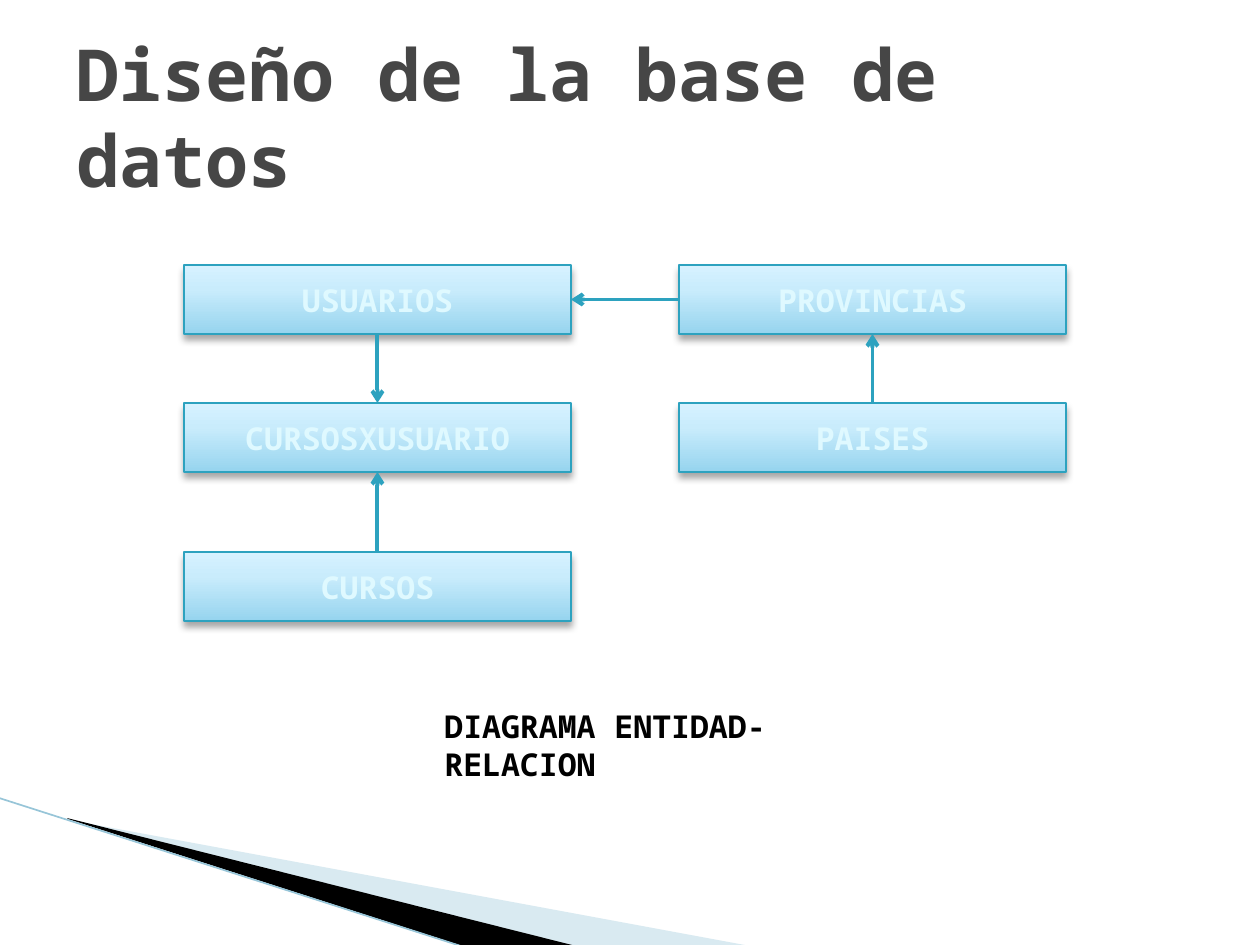
"""Builds the database design slide with its entity-relation diagram."""
from lxml import etree
from pptx import Presentation
from pptx import util as u
from pptx.dml.color import RGBColor
from pptx.enum import shapes, text
from pptx.oxml import parse_xml
from pptx.oxml.ns import nsdecls, qn

PX = 914400 / 126
FONT = "Noto Sans Mono"
GREY = RGBColor(0x46, 0x46, 0x46)
BLACK = RGBColor(0, 0, 0)
TEAL = RGBColor(0x2D, 0xA2, 0xBF)
PALE = RGBColor(0xDF, 0xF9, 0xFF)
MIST = RGBColor(0xA0, 0xCB, 0xDC)
EDGE = RGBColor(0x97, 0xC5, 0xD8)
STOPS = [(0, RGBColor(0x96, 0xD4, 0xEE)), (65, RGBColor(0xC9, 0xEC, 0xFC)),
         (100, RGBColor(0xD7, 0xF2, 0xFF))]

TITLE = ("Diseño de la base de datos", (64, 37, 1134, 158))
LABEL = ("DIAGRAMA ENTIDAD-RELACION", (432, 701, 476, 50))
COLS, ROWS, SIZE = (184, 679), (265, 403, 552), (387, 69)
TABLES = {"USUARIOS": (0, 0), "CURSOSXUSUARIO": (0, 1), "CURSOS": (0, 2),
          "PROVINCIAS": (1, 0), "PAISES": (1, 1)}
LINKS = [("PROVINCIAS", 1, "USUARIOS", 3), ("USUARIOS", 2, "CURSOSXUSUARIO", 0),
         ("CURSOS", 0, "CURSOSXUSUARIO", 2), ("PAISES", 0, "PROVINCIAS", 2)]
WEDGES = [(MIST, 40, [(69, 820), (750, 946), (575, 946), (69, 819)]),
          (BLACK, 100, [(67, 818), (576, 946), (469, 948), (68, 819)])]
STRIPE = (-1, 798, 467, 948)


def px(*vals):
    return [round(v * PX) for v in vals]


def write(shape, words, size, color, **form):
    frame = shape.text_frame
    frame.word_wrap = True
    for key, val in form.items():
        setattr(frame, key, val)
    run = frame.paragraphs[0].add_run()
    run.text = words
    look = {"name": FONT, "size": u.Pt(size), "bold": True}
    for key, val in look.items():
        setattr(run.font, key, val)
    run.font.color.rgb = color
    return run


def wedge(tree, color, alpha, pts):
    pen = tree.build_freeform(*pts[0], scale=PX)
    pen.add_line_segments(pts[1:], close=True)
    shape = pen.convert_to_shape()
    shape.shadow.inherit = False
    shape.fill.solid()
    shape.fill.fore_color.rgb = color
    shape.line.fill.background()
    if alpha < 100:
        tint = shape.fill._xPr.find(".//" + qn("a:srgbClr"))
        etree.SubElement(tint, qn("a:alpha"), val=str(alpha * 1000))


def join(tree, color, width, ends):
    line = tree.add_connector(shapes.MSO_CONNECTOR.STRAIGHT, *px(*ends))
    line.line.color.rgb = color
    line.line.width = u.Pt(width)
    etree.SubElement(line._element.spPr, qn("a:effectLst"))
    return line


def table(tree, name, col, row):
    box = tree.add_shape(shapes.MSO_SHAPE.RECTANGLE, *px(COLS[col], ROWS[row], *SIZE))
    box.line.color.rgb = TEAL
    box.line.width = u.Pt(0.75)
    stops = "".join(f'<a:gs pos="{pos * 1000}"><a:srgbClr val="{tone}"/></a:gs>'
                    for pos, tone in STOPS)
    prop = box._element.spPr
    prop.find(qn("a:prstGeom")).addnext(parse_xml(
        f'<a:gradFill {nsdecls("a")} rotWithShape="1"><a:gsLst>{stops}</a:gsLst>'
        '<a:lin ang="16200000" scaled="0"/></a:gradFill>'))
    prop.append(parse_xml(
        f'<a:effectLst {nsdecls("a")}><a:outerShdw blurRad="{u.Pt(4)}" dist="{u.Pt(3)}" '
        'dir="5400000" rotWithShape="0"><a:srgbClr val="000000"><a:alpha val="35000"/>'
        '</a:srgbClr></a:outerShdw></a:effectLst>'))
    run = write(box, name, 18, PALE, vertical_anchor=text.MSO_ANCHOR.MIDDLE)
    box.text_frame.paragraphs[0].alignment = text.PP_ALIGN.CENTER
    run.font._element.insert(0, parse_xml(
        f'<a:ln {nsdecls("a")} w="{u.Pt(1)}"><a:solidFill><a:srgbClr val="{GREY}"/>'
        '</a:solidFill></a:ln>'))
    return box


def main():
    deck = Presentation()
    deck.slide_width, deck.slide_height = px(1260, 945)
    tree = deck.slides.add_slide(deck.slide_layouts[6]).shapes
    for item in WEDGES:
        wedge(tree, *item)
    join(tree, EDGE, 0.95, STRIPE)
    words, area = TITLE
    write(tree.add_textbox(*px(*area)), words, 41, GREY,
          vertical_anchor=text.MSO_ANCHOR.MIDDLE)
    boxes = {name: table(tree, name, *cell) for name, cell in TABLES.items()}
    for start, out, end, into in LINKS:
        link = join(tree, TEAL, 2.25, (0, 0, 0, 0))
        link.begin_connect(boxes[start], out)
        link.end_connect(boxes[end], into)
        etree.SubElement(link.line._get_or_add_ln(), qn("a:tailEnd"), type="arrow")
    words, area = LABEL
    write(tree.add_textbox(*px(*area)), words, 18, BLACK,
          auto_size=text.MSO_AUTO_SIZE.SHAPE_TO_FIT_TEXT)
    deck.save("out.pptx")


if __name__ == "__main__":
    main()
